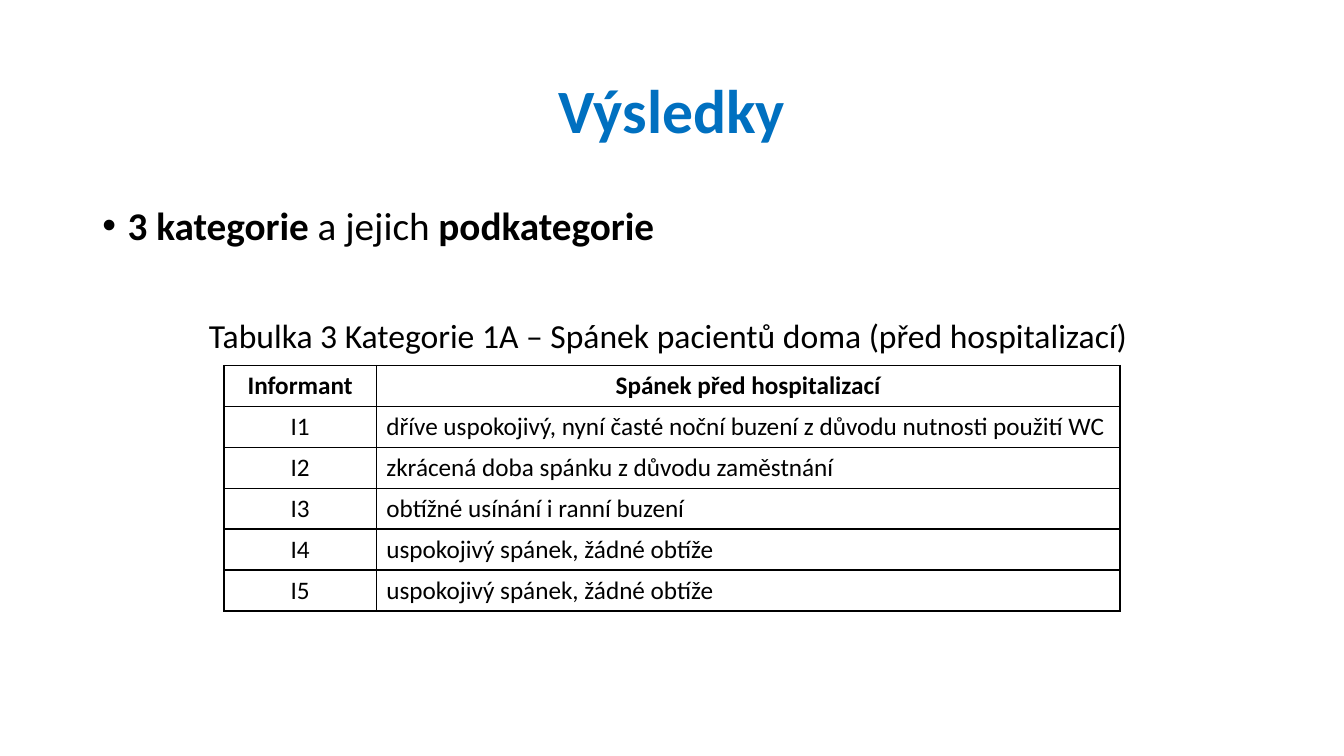
from lxml import etree
from pptx import Presentation
from pptx import util as u
from pptx.dml.color import RGBColor
from pptx.enum import text
from pptx.oxml.ns import qn

FONT = "Calibri"
BLACK = "000000"
BLUE = "0070C0"
ROWS = [
    ("Informant", "Spánek před hospitalizací"),
    ("I1", "dříve uspokojivý, nyní časté noční buzení z důvodu nutnosti použití WC"),
    ("I2", "zkrácená doba spánku z důvodu zaměstnání"),
    ("I3", "obtížné usínání i ranní buzení"),
    ("I4", "uspokojivý spánek, žádné obtíže"),
    ("I5", "uspokojivý spánek, žádné obtíže"),
]


def colour(value):
    """Turn a hex string into a colour."""
    return RGBColor.from_string(value)


def write(para, words, size=18, bold=False, ink=BLACK, align="LEFT", line=1.0, before=0):
    """Add a formatted span to a paragraph and set the paragraph's layout."""
    para.alignment = getattr(text.PP_ALIGN, align)
    para.line_spacing = line
    para.space_before = u.Pt(before)
    span = para.add_run()
    span.text = words
    span.font.name = FONT
    span.font.size = u.Pt(size)
    span.font.bold = bold
    span.font.color.rgb = colour(ink)


def set_bullet(para, mark=None, indent=0):
    """Give a paragraph a hanging bullet, or none."""
    properties = para._p.get_or_add_pPr()
    properties.set("marL", str(u.Pt(indent)))
    properties.set("indent", str(u.Pt(-indent)))
    if mark:
        etree.SubElement(properties, qn("a:buFont"), typeface="Arial")
        etree.SubElement(properties, qn("a:buChar"), char=mark)
    else:
        etree.SubElement(properties, qn("a:buNone"))


def place(shape, left, top, width, height):
    """Move a placeholder to a box given in points and return its text frame."""
    shape.left, shape.top = u.Pt(left), u.Pt(top)
    shape.width, shape.height = u.Pt(width), u.Pt(height)
    frame = shape.text_frame
    frame.word_wrap = True
    frame.auto_size = text.MSO_AUTO_SIZE.NONE
    return frame


def add_title(page, *box):
    """Fill the title placeholder."""
    frame = place(page.shapes.title, *box)
    frame.vertical_anchor = text.MSO_ANCHOR.MIDDLE
    write(frame.paragraphs[0], "Výsledky", size=44, bold=True, ink=BLUE, align="CENTER", line=0.9)


def add_body(page, *box):
    """Fill the body placeholder with the bullet and the table caption."""
    frame = place(page.placeholders[1], *box)
    frame.vertical_anchor = text.MSO_ANCHOR.TOP
    para = frame.paragraphs[0]
    set_bullet(para, "•", 18)
    for words, bold in (("3 kategorie ", True), ("a jejich ", False), ("podkategorie", True)):
        write(para, words, size=28, bold=bold, line=0.9)
    caption = frame.add_paragraph()
    set_bullet(caption)
    write(caption, "Tabulka 3 Kategorie 1A – Spánek pacientů doma (před hospitalizací) ",
          size=24, align="CENTER", line=0.9, before=50.8)


def add_borders(cell):
    """Draw a one-point line on each side of a cell."""
    properties = cell._tc.get_or_add_tcPr()
    for position, side in enumerate(("lnL", "lnR", "lnT", "lnB")):
        border = etree.Element(qn(f"a:{side}"), w=str(u.Pt(1)))
        fill = etree.SubElement(border, qn("a:solidFill"))
        etree.SubElement(fill, qn("a:srgbClr"), val=BLACK)
        properties.insert(position, border)


def add_results(page, left, top, width, height):
    """Draw the table of informants."""
    table = page.shapes.add_table(
        len(ROWS), 2, u.Pt(left), u.Pt(top), u.Pt(width), u.Pt(height)).table
    table.first_row = table.horz_banding = False
    label_width = width * 0.17
    table.columns[0].width = u.Pt(label_width)
    table.columns[1].width = u.Pt(width - label_width)
    for row, entries in enumerate(ROWS):
        header = row == 0
        for column, words in enumerate(entries):
            cell = table.cell(row, column)
            cell.fill.background()
            add_borders(cell)
            cell.vertical_anchor = text.MSO_ANCHOR.MIDDLE if header else text.MSO_ANCHOR.TOP
            write(cell.text_frame.paragraphs[0], words, bold=header,
                  align="CENTER" if header or column == 0 else "LEFT")


def main():
    """Build the deck."""
    deck = Presentation()
    deck.slide_width, deck.slide_height = u.Pt(960), u.Pt(540)
    page = deck.slides.add_slide(deck.slide_layouts[1])
    add_title(page, 66, 28.75, 828, 104.4)
    add_body(page, 66, 143.75, 828, 342.6)
    add_results(page, 160, 261, 640, 175.5)
    deck.save("out.pptx")


if __name__ == "__main__":
    main()
